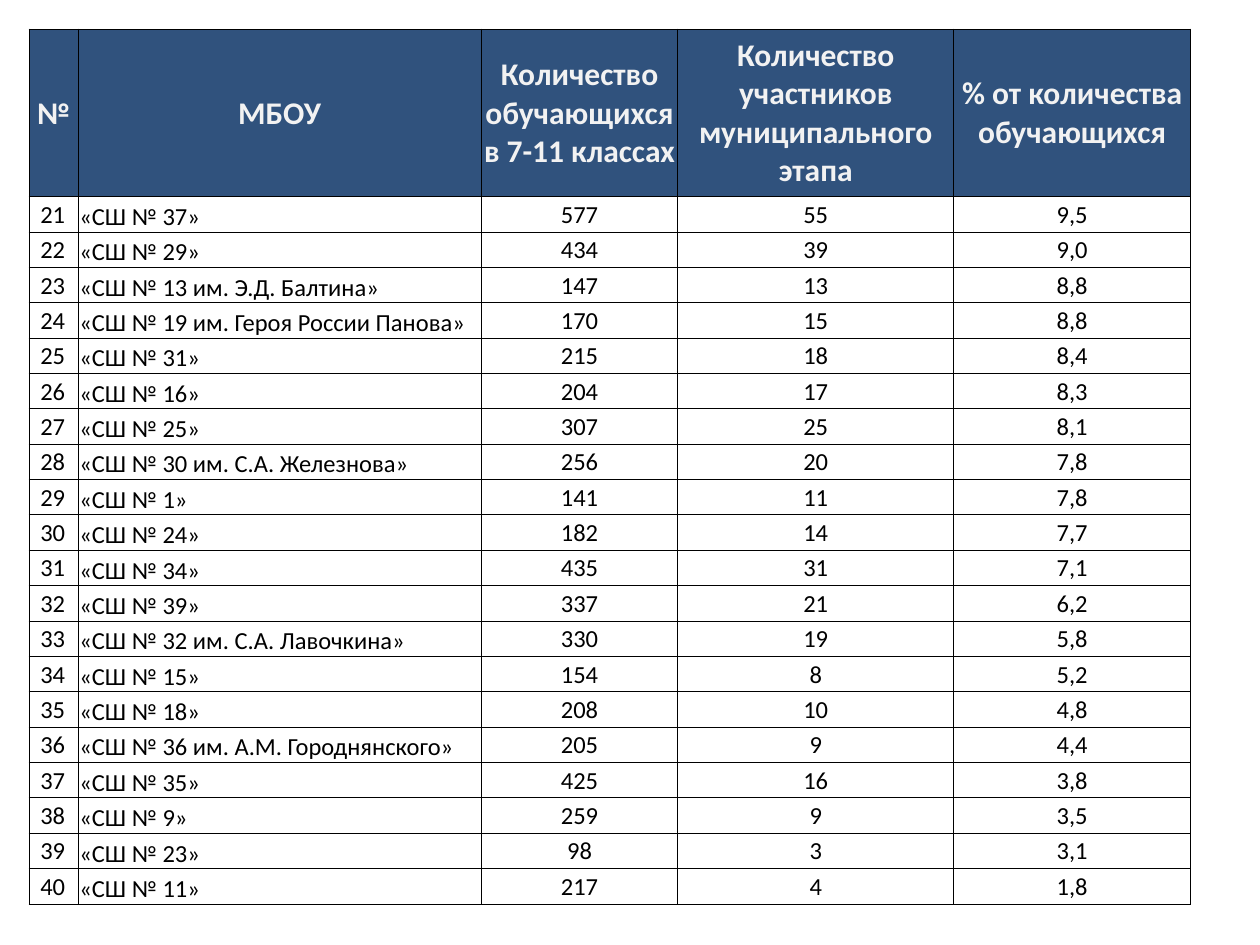
from dataclasses import dataclass
from typing import Optional

import pptx
import pptx.dml.color
import pptx.enum.text
import pptx.oxml.ns
import pptx.table
import pptx.util
from lxml import etree

Inches = pptx.util.Inches
Pt = pptx.util.Pt
RGBColor = pptx.dml.color.RGBColor
Align = pptx.enum.text.PP_ALIGN
Anchor = pptx.enum.text.MSO_ANCHOR

NAVY = RGBColor(0x30, 0x52, 0x7D)
PALE = RGBColor(0xF2, 0xF2, 0xF2)
BLACK = RGBColor(0, 0, 0)

LEFT = TOP = Inches(0.23)
COLUMN_WIDTHS = [Inches(w) for w in (0.39, 3.2, 1.56, 2.19, 1.88)]
TABLE_HEIGHT = Inches(6.95)
HEADER_HEIGHT = Inches(1.33)
FIRST_NUMBER = 21

HEADINGS = (
    "№",
    "МБОУ",
    "Количество обучающихся в 7-11 классах",
    "Количество участников муниципального этапа",
    "% от количества обучающихся",
)


@dataclass
class School:
    name: str
    pupils: int
    participants: int

    def share(self) -> str:
        return f"{100 * self.participants / self.pupils:.1f}".replace(".", ",")


SCHOOLS = (
    School("37", 577, 55),
    School("29", 434, 39),
    School("13 им. Э.Д. Балтина", 147, 13),
    School("19 им. Героя России Панова", 170, 15),
    School("31", 215, 18),
    School("16", 204, 17),
    School("25", 307, 25),
    School("30 им. С.А. Железнова", 256, 20),
    School("1", 141, 11),
    School("24", 182, 14),
    School("34", 435, 31),
    School("39", 337, 21),
    School("32 им. С.А. Лавочкина", 330, 19),
    School("15", 154, 8),
    School("18", 208, 10),
    School("36 им. А.М. Городнянского", 205, 9),
    School("35", 425, 16),
    School("9", 259, 9),
    School("23", 98, 3),
    School("11", 217, 4),
)


def add_borders(cell: pptx.table._Cell) -> None:
    """Draw a thin black line on each side of the cell."""
    qn = pptx.oxml.ns.qn
    properties = cell._tc.get_or_add_tcPr()
    for side in ("a:lnL", "a:lnR", "a:lnT", "a:lnB"):
        line = etree.SubElement(properties, qn(side), w=str(int(Pt(0.5))))
        paint = etree.SubElement(line, qn("a:solidFill"))
        etree.SubElement(paint, qn("a:srgbClr"), val=str(BLACK))


def write_cell(
    cell: pptx.table._Cell,
    text: str,
    *,
    size: int = 14,
    color: RGBColor = BLACK,
    bold: bool = False,
    align: Align = Align.CENTER,
    anchor: Anchor = Anchor.MIDDLE,
    indent: float = 0,
    fill: Optional[RGBColor] = None,
) -> None:
    cell.margin_left = cell.margin_right = cell.margin_top = Inches(0.01)
    cell.margin_bottom = 0
    cell.vertical_anchor = anchor
    add_borders(cell)
    if fill is None:
        cell.fill.background()
    else:
        cell.fill.solid()
        cell.fill.fore_color.rgb = fill

    paragraph = cell.text_frame.paragraphs[0]
    paragraph.alignment = align
    if indent:
        paragraph._p.get_or_add_pPr().set("marL", str(int(Inches(indent))))
    run = paragraph.add_run()
    run.text = text
    run.font.name = "Calibri"
    run.font.size = Pt(size)
    run.font.bold = bold
    run.font.color.rgb = color


def write_school(table: pptx.table.Table, row: int, school: School) -> None:
    number = FIRST_NUMBER + row - 1
    write_cell(table.cell(row, 0), str(number), align=Align.LEFT, indent=0.08)
    write_cell(table.cell(row, 1), f"«СШ № {school.name}»",
               align=Align.LEFT, anchor=Anchor.BOTTOM)
    figures = (str(school.pupils), str(school.participants), school.share())
    for column, figure in enumerate(figures, start=2):
        write_cell(table.cell(row, column), figure)


def main() -> None:
    presentation = pptx.Presentation()
    presentation.slide_width = Inches(10)
    presentation.slide_height = Inches(7.5)
    slide = presentation.slides.add_slide(presentation.slide_layouts[6])

    # Table grid
    ranking = slide.shapes.add_table(
        len(SCHOOLS) + 1, len(HEADINGS), LEFT, TOP, sum(COLUMN_WIDTHS), TABLE_HEIGHT
    ).table
    ranking.first_row = ranking.horz_banding = False
    for column, width in zip(ranking.columns, COLUMN_WIDTHS):
        column.width = width
    school_height = (TABLE_HEIGHT - HEADER_HEIGHT) // len(SCHOOLS)
    for row in ranking.rows:
        row.height = school_height
    ranking.rows[0].height = HEADER_HEIGHT

    # Header row
    for column, heading in enumerate(HEADINGS):
        write_cell(ranking.cell(0, column), heading,
                   size=18, color=PALE, bold=True, fill=NAVY)

    # School rows
    for row, school in enumerate(SCHOOLS, start=1):
        write_school(ranking, row, school)

    presentation.save("out.pptx")


if __name__ == "__main__":
    main()
